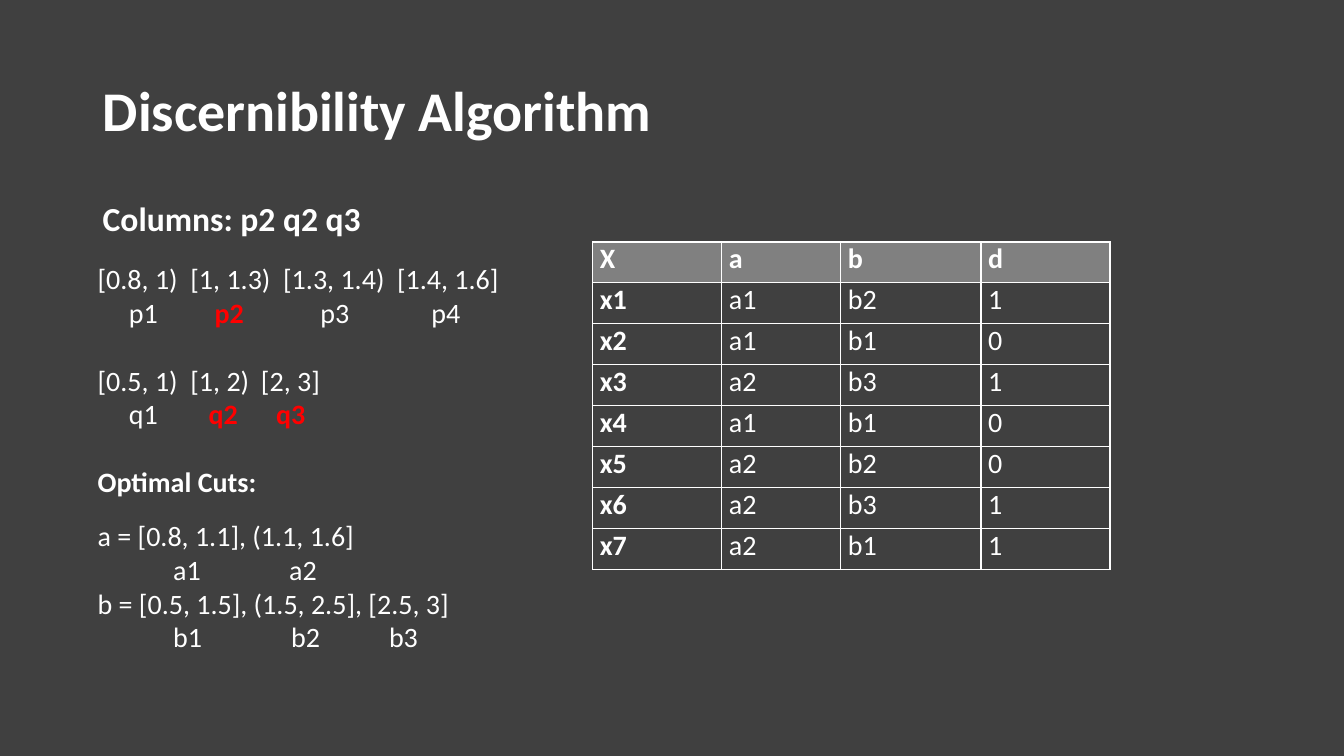
from pptx import Presentation
from pptx.dml.color import RGBColor
from pptx.enum import text as te
from pptx.oxml import parse_xml
from pptx.oxml.ns import nsdecls
from pptx.util import Inches, Pt

DARK = RGBColor(0x40, 0x40, 0x40)
GRAY = RGBColor(0x80, 0x80, 0x80)
WHITE = RGBColor(0xFF, 0xFF, 0xFF)
RED = RGBColor(0xFF, 0x00, 0x00)

# Interval lines: (runs as (text, marked), tab stops in inches, space before)
CUTS = [
    ([("[0.8, 1)\t[1, 1.3)\t[1.3, 1.4)\t[1.4, 1.6]", False)],
     [0.92, 1.84, 2.97], 0),
    ([("\tp1", False), ("\tp2", True), ("\tp3\tp4", False)],
     [0.31, 1.16, 2.21, 3.31], 0),
    ([("[0.5, 1)\t[1, 2)\t[2, 3]", False)], [0.92, 1.62], 24.4),
    ([("\tq1", False), ("\tq2\tq3", True)], [0.31, 1.1, 1.77], 0),
]
BEST = [
    ("a = [0.8, 1.1], (1.1, 1.6]", [], 14.6),
    ("\ta1\ta2", [0.75, 1.9], 0),
    ("b = [0.5, 1.5], (1.5, 2.5], [2.5, 3]", [], 0),
    ("\tb1\tb2\tb3", [0.75, 1.92, 2.89], 0),
]

HEAD = ["X", "a", "b", "d"]
ROWS = [
    ["x1", "a1", "b2", "1"],
    ["x2", "a1", "b1", "0"],
    ["x3", "a2", "b3", "1"],
    ["x4", "a1", "b1", "0"],
    ["x5", "a2", "b2", "0"],
    ["x6", "a2", "b3", "1"],
    ["x7", "a2", "b1", "1"],
]
WIDTHS = [1.28, 1.18, 1.39, 1.28]


def write(para, text, size=20, color=WHITE, bold=False):
    run = para.add_run()
    run.text = text
    font = run.font
    font.name, font.size, font.bold = "Calibri", Pt(size), bold
    font.color.rgb = color


def set_tabs(para, stops):
    if stops:
        tabs = "".join(f'<a:tab pos="{Inches(stop)}" algn="l"/>' for stop in stops)
        para._p.get_or_add_pPr().append(
            parse_xml(f'<a:tabLst {nsdecls("a")}>{tabs}</a:tabLst>'))


def add_box(slide, left, top, width, height):
    box = slide.shapes.add_textbox(
        Inches(left), Inches(top), Inches(width), Inches(height))
    frame = box.text_frame
    frame.word_wrap = True
    frame.auto_size = te.MSO_AUTO_SIZE.SHAPE_TO_FIT_TEXT
    return frame


def add_title(slide, text):
    title = slide.shapes.title
    title.left, title.top = Inches(0.92), Inches(0.4)
    title.width, title.height = Inches(11.5), Inches(1.45)
    title.text_frame.vertical_anchor = te.MSO_ANCHOR.MIDDLE
    para = title.text_frame.paragraphs[0]
    para.alignment = te.PP_ALIGN.LEFT
    para.line_spacing = 0.9
    write(para, text, size=40, bold=True)


def add_cuts(slide):
    frame = add_box(slide, 0.87, 2.55, 5.66, 4.14)
    lines = CUTS + [([("Optimal Cuts:", False)], [], 24.4)]
    lines += [([(text, False)], stops, gap) for text, stops, gap in BEST]
    for i, (runs, stops, gap) in enumerate(lines):
        para = frame.add_paragraph() if i else frame.paragraphs[0]
        if gap:
            para.space_before = Pt(gap)
        set_tabs(para, stops)
        for text, marked in runs:
            write(para, text, color=RED if marked else WHITE,
                  bold=marked or text == "Optimal Cuts:")


def add_edges(cell):
    props = cell._tc.get_or_add_tcPr()
    for side in "LRTB":
        props.append(parse_xml(
            f'<a:ln{side} {nsdecls("a")} w="{Pt(1)}"><a:solidFill>'
            f'<a:srgbClr val="{WHITE}"/></a:solidFill></a:ln{side}>'))


def add_grid(slide):
    data = [HEAD] + ROWS
    grid = slide.shapes.add_table(
        len(data), len(HEAD), Inches(5.88), Inches(2.4),
        Inches(sum(WIDTHS)), Inches(3.25)).table
    grid.horz_banding = False
    for col, width in zip(grid.columns, WIDTHS):
        col.width = Inches(width)
    for r, row in enumerate(data):
        for c, text in enumerate(row):
            cell = grid.cell(r, c)
            cell.margin_left = cell.margin_right = Inches(0.07)
            cell.margin_top = cell.margin_bottom = 0
            add_edges(cell)
            if r == 0:
                cell.fill.solid()
                cell.fill.fore_color.rgb = GRAY
            else:
                cell.fill.background()
            write(cell.text_frame.paragraphs[0], text, bold=r == 0 or c == 0)


def main():
    deck = Presentation()
    deck.slide_width, deck.slide_height = Inches(13.33), Inches(7.5)
    slide = deck.slides.add_slide(deck.slide_layouts[5])
    slide.background.fill.solid()
    slide.background.fill.fore_color.rgb = DARK

    # Headings
    add_title(slide, "Discernibility Algorithm")
    frame = add_box(slide, 0.92, 1.91, 2.78, 0.5)
    write(frame.paragraphs[0], "Columns: p2 q2 q3", size=24, bold=True)

    # Intervals on the left, reduced table on the right
    add_cuts(slide)
    add_grid(slide)
    deck.save("out.pptx")


if __name__ == "__main__":
    main()
